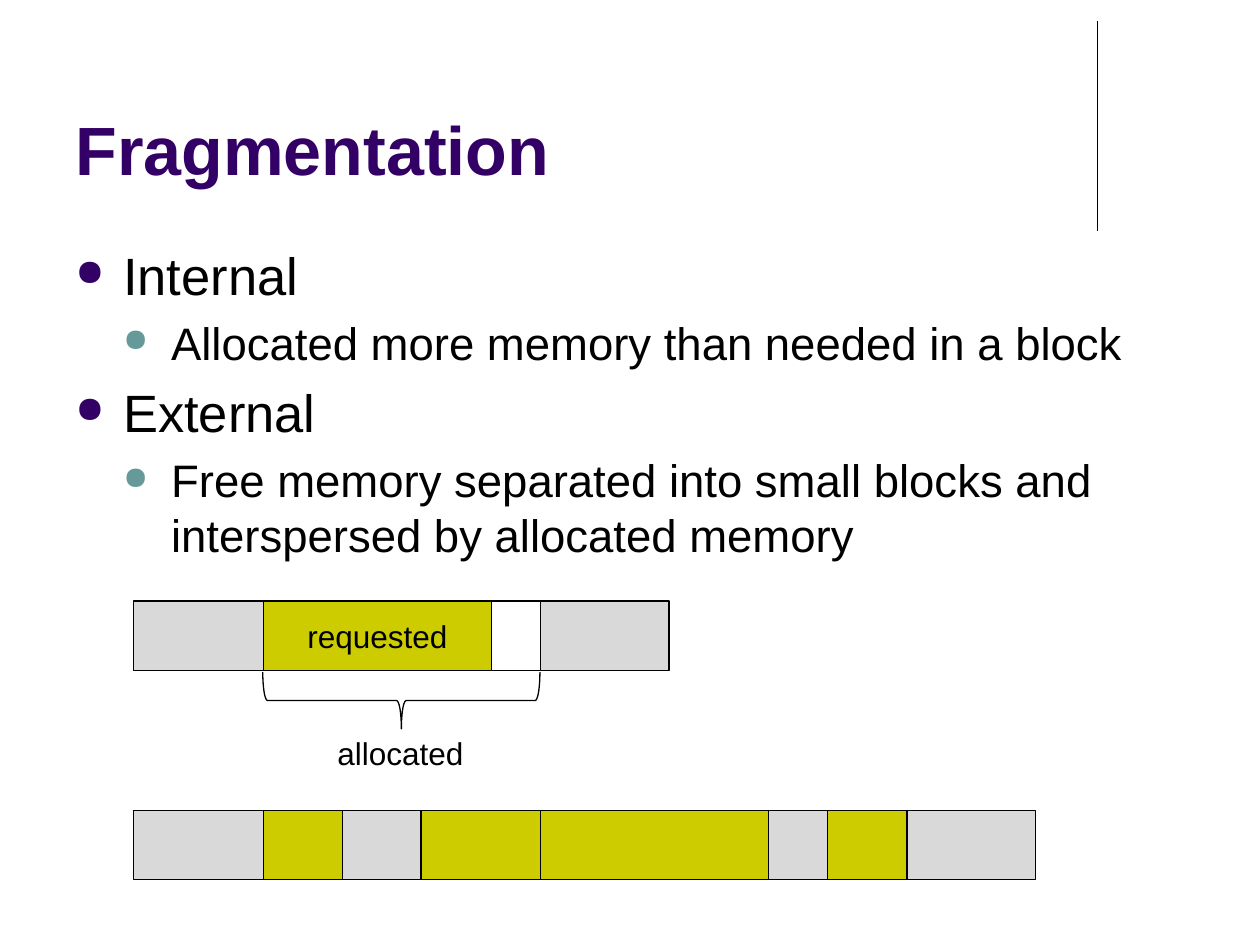
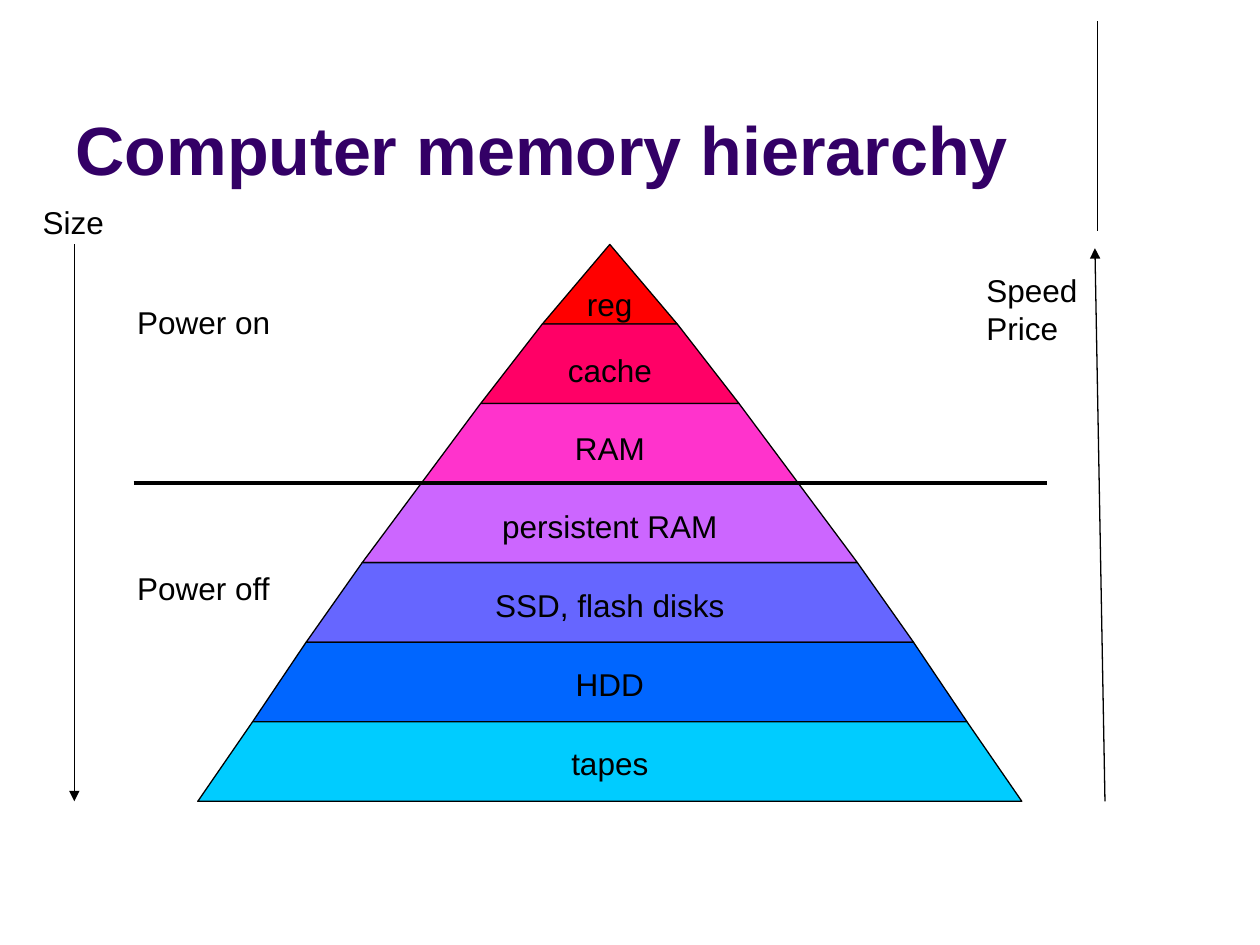
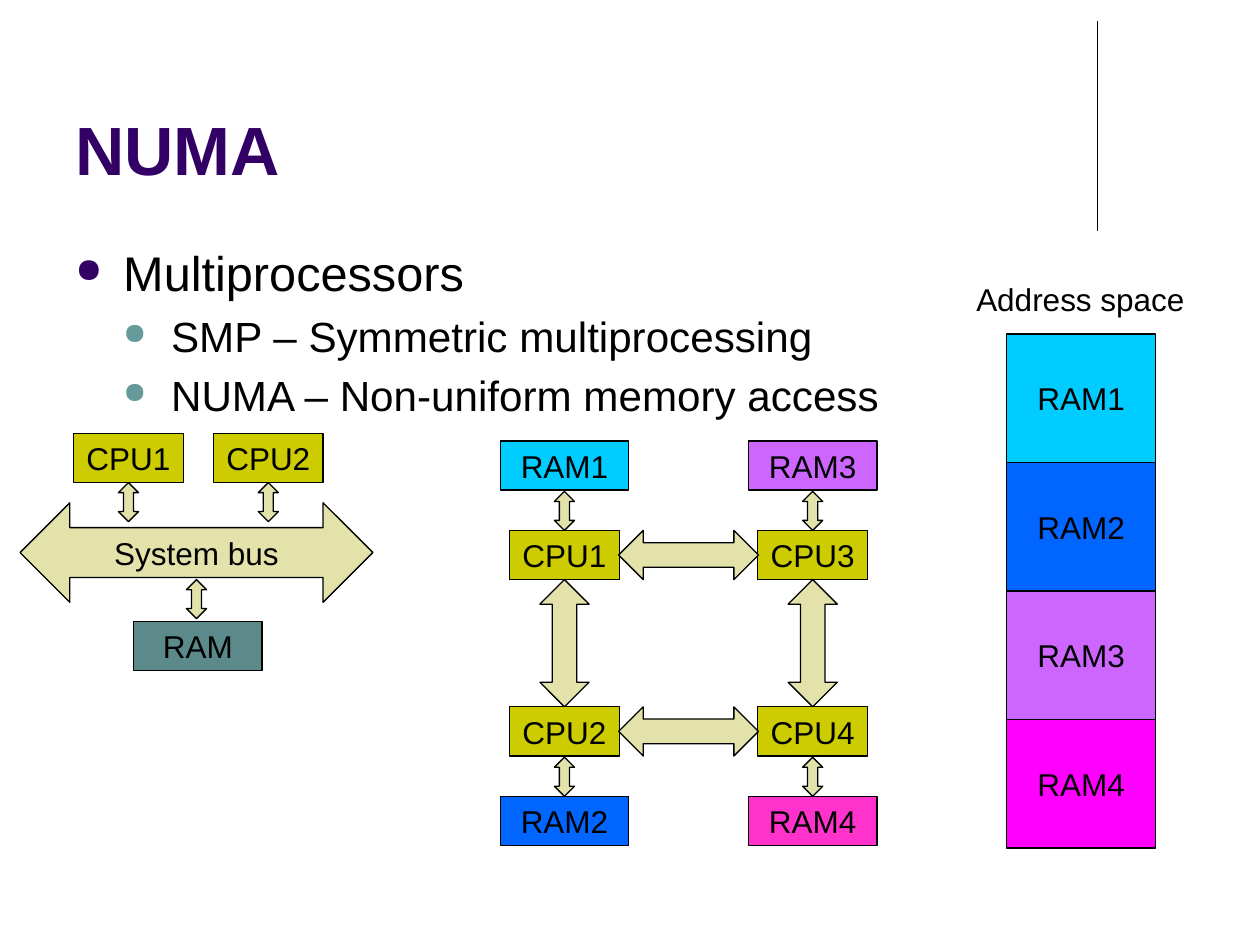
"""Build three slides on memory: fragmentation, hierarchy and NUMA."""
from dataclasses import dataclass

from lxml import etree
from pptx import Presentation
from pptx.dml.color import RGBColor
from pptx.enum.shapes import MSO_CONNECTOR, MSO_SHAPE
from pptx.enum.text import MSO_ANCHOR, PP_ALIGN
from pptx.oxml.ns import qn
from pptx.util import Inches, Pt

RECTANGLE = MSO_SHAPE.RECTANGLE
TRIANGLE = MSO_SHAPE.ISOSCELES_TRIANGLE
TRAPEZOID = MSO_SHAPE.TRAPEZOID
BRACE = MSO_SHAPE.RIGHT_BRACE
ACROSS = MSO_SHAPE.LEFT_RIGHT_ARROW
UP_DOWN = MSO_SHAPE.UP_DOWN_ARROW
STRAIGHT = MSO_CONNECTOR.STRAIGHT
TOP, MIDDLE, BOTTOM = MSO_ANCHOR.TOP, MSO_ANCHOR.MIDDLE, MSO_ANCHOR.BOTTOM
CENTER = PP_ALIGN.CENTER

FONT = "Arial"
LABEL_SIZE = 18
COLORS = {
    "ink": "000000", "title": "330066", "teal": "669999", "white": "FFFFFF",
    "olive": "CCCC00", "gray": "D9D9D9", "sand": "E2E2AA", "slate": "5C8A8A",
    "red": "FF0000", "rose": "FF0066", "pink": "FF33CC", "violet": "CC66FF",
    "indigo": "6666FF", "blue": "0066FF", "cyan": "00CCFF", "magenta": "FF00FF",
}
BULLET_COLORS = ("title", "teal")
INDENT = 0.38


@dataclass
class Block:
    left: float
    top: float
    width: float
    height: float
    fill: str | None = None
    text: str = ""
    kind: int = RECTANGLE
    adjust: float | None = None
    rotation: float = 0


@dataclass
class Label:
    text: str
    left: float
    top: float
    width: float
    height: float = 0.4


@dataclass
class Rule:
    start: tuple[float, float]
    end: tuple[float, float]
    weight: float = 0.75
    arrow: bool = False


@dataclass
class Bullet:
    text: str
    level: int = 0


def color(name: str) -> RGBColor:
    """Return the named colour."""
    return RGBColor.from_string(COLORS[name])


def add_span(para, text: str, size: float, ink: str = "ink", bold: bool = False) -> None:
    """Add one styled run."""
    span = para.add_run()
    span.text = text
    span.font.name = FONT
    span.font.size = Pt(size)
    span.font.bold = bold
    span.font.color.rgb = color(ink)


def draw_block(page, block: Block) -> None:
    """Draw an outlined shape with an optional centred caption."""
    shape = page.shapes.add_shape(block.kind, Inches(block.left), Inches(block.top),
                                  Inches(block.width), Inches(block.height))
    shape.shadow.inherit = False
    shape.rotation = block.rotation
    if block.adjust is not None:
        shape.adjustments[0] = block.adjust
    if block.fill:
        shape.fill.solid()
        shape.fill.fore_color.rgb = color(block.fill)
    else:
        shape.fill.background()
    shape.line.color.rgb = color("ink")
    shape.line.width = Pt(0.75)
    if block.text:
        frame = shape.text_frame
        frame.word_wrap = False
        frame.vertical_anchor = MIDDLE
        if block.kind == TRIANGLE:
            frame.margin_top = frame.margin_bottom = 0
        para = frame.paragraphs[0]
        para.alignment = CENTER
        add_span(para, block.text, LABEL_SIZE)


def draw_label(page, label: Label) -> None:
    """Draw a free label, one paragraph for each line."""
    box = page.shapes.add_textbox(Inches(label.left), Inches(label.top),
                                  Inches(label.width), Inches(label.height))
    frame = box.text_frame
    frame.word_wrap = False
    for index, line in enumerate(label.text.split("\n")):
        para = frame.add_paragraph() if index else frame.paragraphs[0]
        add_span(para, line, LABEL_SIZE)


def draw_rule(page, rule: Rule) -> None:
    """Draw a straight line with an optional arrowhead at its end."""
    line = page.shapes.add_connector(STRAIGHT, *(Inches(v) for v in rule.start + rule.end))
    line.line.color.rgb = color("ink")
    line.line.width = Pt(rule.weight)
    properties = line._element.spPr
    if rule.arrow:
        etree.SubElement(properties.find(qn("a:ln")), qn("a:tailEnd"), type="triangle")
    etree.SubElement(properties, qn("a:effectLst"))


def draw_bullets(page, bullets: list[Bullet], sizes: tuple[float, float], height: float) -> None:
    """Draw the two-level bulleted body."""
    box = page.shapes.add_textbox(Inches(0.5), Inches(1.88), Inches(9), Inches(height))
    frame = box.text_frame
    frame.word_wrap = True
    for index, bullet in enumerate(bullets):
        para = frame.add_paragraph() if index else frame.paragraphs[0]
        size = sizes[bullet.level]
        if index:
            para.space_before = Pt(0.2 * size)
        properties = para._p.get_or_add_pPr()
        properties.set("marL", str(Inches(INDENT * (bullet.level + 1))))
        properties.set("indent", str(-Inches(INDENT)))
        tint = etree.SubElement(properties, qn("a:buClr"))
        etree.SubElement(tint, qn("a:srgbClr"), val=COLORS[BULLET_COLORS[bullet.level]])
        etree.SubElement(properties, qn("a:buSzPct"), val="70000")
        etree.SubElement(properties, qn("a:buChar"), char="●")
        add_span(para, bullet.text, size)


def add_page(deck, title: str):
    """Add a blank page with the corner rule and the title."""
    page = deck.slides.add_slide(deck.slide_layouts[6])
    draw_rule(page, Rule((8.71, 0.17), (8.71, 1.83)))
    box = page.shapes.add_textbox(Inches(0.5), Inches(0.13), Inches(8.25), Inches(1.42))
    frame = box.text_frame
    frame.word_wrap = True
    frame.vertical_anchor = BOTTOM
    add_span(frame.paragraphs[0], title, 39, "title", True)
    return page


def draw_memory_strip(page, top: float, cells: list[tuple]) -> None:
    """Draw adjoining memory cells from left to right."""
    left = 1.06
    for width, fill, *caption in cells:
        draw_block(page, Block(left, top, width, 0.55, fill, *caption))
        left += width


def build_fragmentation(deck) -> None:
    """Build the fragmentation page."""
    page = add_page(deck, "Fragmentation")
    draw_bullets(page, [
        Bullet("Internal"),
        Bullet("Allocated more memory than needed in a block", 1),
        Bullet("External"),
        Bullet("Free memory separated into small blocks and interspersed by allocated memory", 1),
    ], (30, 26), 2.74)
    draw_memory_strip(page, 4.77, [(1.03, "gray"), (1.81, "olive", "requested"),
                                   (0.39, "white"), (1.02, "gray")])
    draw_block(page, Block(2.96, 4.46, 0.45, 2.2, kind=BRACE, rotation=90))
    draw_label(page, Label("allocated", 2.58, 5.78, 1.21))
    draw_memory_strip(page, 6.43, [
        (1.03, "gray"), (0.63, "olive"), (0.62, "gray"), (0.95, "olive"),
        (1.81, "olive"), (0.47, "gray"), (0.63, "olive"), (1.02, "gray"),
    ])


def build_hierarchy(deck) -> None:
    """Build the memory pyramid page."""
    page = add_page(deck, "Computer memory hierarchy")
    center, top, bottom = 4.84, 1.94, 6.36
    tiers = [
        ("reg", 1.07, "red"), ("cache", 2.05, "rose"), ("RAM", 2.99, "pink"),
        ("persistent RAM", 3.93, "violet"), ("SSD, flash disks", 4.82, "indigo"),
        ("HDD", 5.67, "blue"), ("tapes", 6.54, "cyan"),
    ]
    height = (bottom - top) / len(tiers)
    upper = 0.0
    for index, (name, width, fill) in enumerate(tiers):
        kind, slope = (TRAPEZOID, (width - upper) / 2 / height) if index else (TRIANGLE, None)
        draw_block(page, Block(center - width / 2, top + index * height, width, height,
                               fill, name, kind, slope))
        upper = width
    power_line = top + 3 * height
    for rule in (Rule((0.59, top), (0.59, bottom), arrow=True),
                 Rule((8.77, bottom), (8.69, 1.97), arrow=True),
                 Rule((1.06, power_line), (8.31, power_line), 2.5)):
        draw_rule(page, rule)
    for label in (Label("Size", 0.24, 1.56, 0.69),
                  Label("Speed\nPrice", 7.73, 2.1, 0.93, 0.71),
                  Label("Power on", 0.99, 2.36, 1.27),
                  Label("Power off", 0.99, 4.47, 1.26)):
        draw_label(page, label)


def draw_link(page, center: float, top: float) -> None:
    """Draw a short vertical double arrow."""
    draw_block(page, Block(center - 0.08, top, 0.16, 0.31, "sand", kind=UP_DOWN))


def draw_unit(page, name: str, center: float, top: float, fill: str) -> None:
    """Draw a processor or memory box around a centre."""
    width = 0.87 if name.startswith("CPU") else 1.02
    draw_block(page, Block(center - width / 2, top, width, 0.39, fill, name))


def build_numa(deck) -> None:
    """Build the multiprocessor page."""
    page = add_page(deck, "NUMA")
    draw_bullets(page, [
        Bullet("Multiprocessors"),
        Bullet("SMP – Symmetric multiprocessing", 1),
        Bullet("NUMA – Non-uniform memory access", 1),
    ], (27.8, 24.1), 1.4)

    draw_block(page, Block(0.16, 3.99, 2.8, 0.79, "sand", "System bus", ACROSS))
    for name, center in (("CPU1", 1.02), ("CPU2", 2.13)):
        draw_unit(page, name, center, 3.44, "olive")
        draw_link(page, center, 3.83)
    draw_unit(page, "RAM", 1.57, 4.93, "slate")
    draw_link(page, 1.56, 4.6)

    upper, lower = 4.21, 5.61
    for center, first, fills in ((4.48, 1, ("cyan", "blue")), (6.45, 3, ("violet", "pink"))):
        draw_block(page, Block(center - 0.195, 4.6, 0.39, 1.01, "sand", kind=UP_DOWN))
        rows = ((upper, 3.5, 3.9), (lower, 6.32, 6.01))
        for number, fill, (cpu_top, ram_top, link_top) in zip((first, first + 1), fills, rows):
            draw_unit(page, f"CPU{number}", center, cpu_top, "olive")
            draw_unit(page, f"RAM{number}", center, ram_top, fill)
            draw_link(page, center, link_top)
    for top in (upper, lower):
        draw_block(page, Block(4.91, top, 1.11, 0.39, "sand", kind=ACROSS))

    draw_label(page, Label("Address space", 7.65, 2.17, 1.87))
    for index, fill in enumerate(("cyan", "blue", "violet", "magenta")):
        draw_block(page, Block(7.99, 2.65 + 1.02 * index, 1.18, 1.02, fill, f"RAM{index + 1}"))


def main() -> None:
    """Build and save the deck."""
    deck = Presentation()
    deck.slide_width, deck.slide_height = Inches(10), Inches(7.5)
    build_fragmentation(deck)
    build_hierarchy(deck)
    build_numa(deck)
    deck.save("out.pptx")


if __name__ == "__main__":
    main()
